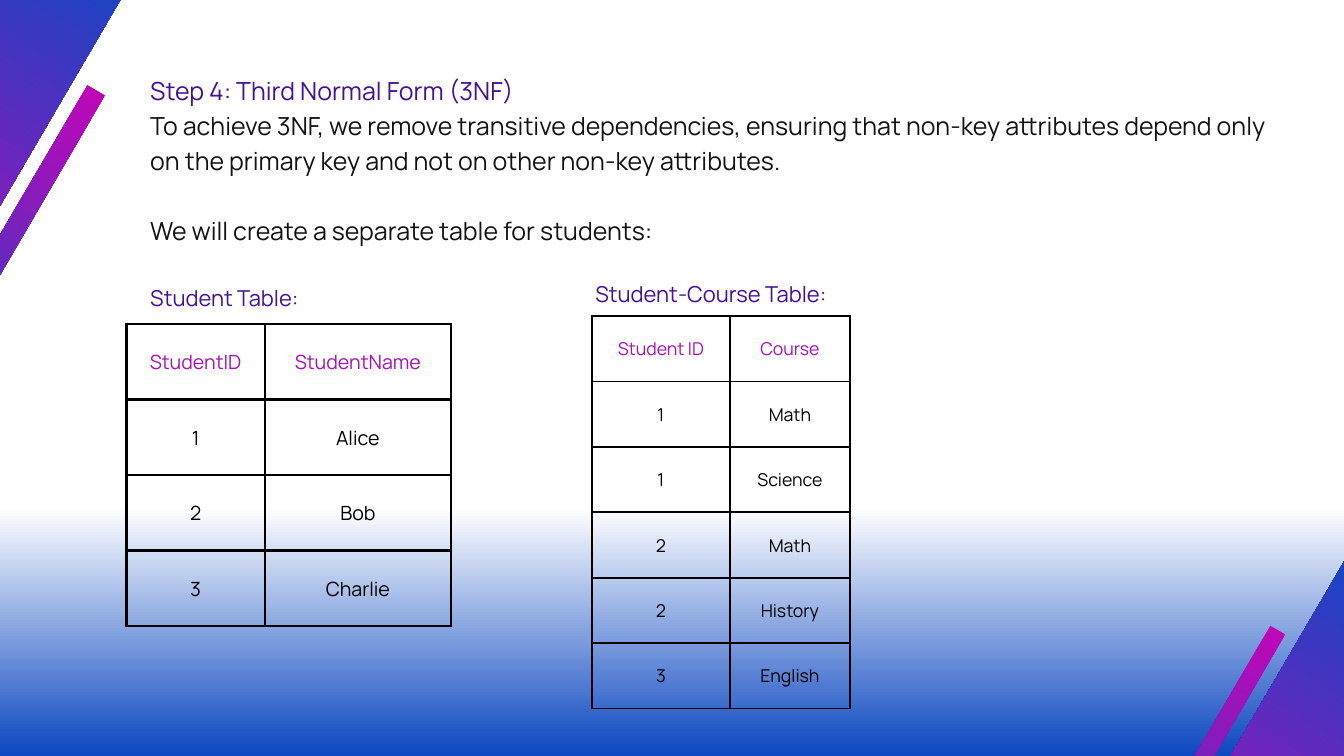
from dataclasses import dataclass

from lxml.etree import SubElement
from pptx import Presentation
from pptx.dml.color import RGBColor
from pptx.enum.shapes import MSO_SHAPE
from pptx.enum.text import MSO_ANCHOR, PP_ALIGN
from pptx.oxml.ns import qn
from pptx.util import Pt

RECTANGLE = MSO_SHAPE.RECTANGLE
MIDDLE = MSO_ANCHOR.MIDDLE
CENTER = PP_ALIGN.CENTER

FONT = "Manrope"
WHITE = RGBColor(0xFF, 0xFF, 0xFF)
BLACK = RGBColor(0x00, 0x00, 0x00)
INK = RGBColor(0x12, 0x12, 0x12)
HEADING = RGBColor(0x43, 0x10, 0x96)
COLUMN_HEADING = RGBColor(0xA8, 0x0F, 0xB9)
SKY = RGBColor(0x0B, 0x47, 0xC0)
VIOLET = RGBColor(0x51, 0x04, 0x8D)
BLUE = RGBColor(0x05, 0x4C, 0xC4)
MAGENTA = RGBColor(0xC4, 0x05, 0xB7)

BACKGROUND_STOPS = [(0, WHITE), (67, WHITE), (100, SKY)]
WIDE_STOPS = [(0, VIOLET), (50, BLUE), (100, MAGENTA)]
NARROW_STOPS = [(0, MAGENTA), (50, BLUE), (100, VIOLET)]
BAND_ROTATION = 30.3
CELL_MARGIN = 15
LINE_FACTOR = 1.4


@dataclass
class Band:
    left: float
    top: float
    width: float
    height: float
    stops: list


@dataclass
class Grid:
    left: float
    top: float
    column_widths: list
    row_height: float
    font_size: float
    border: float
    rows: list


@dataclass
class Line:
    text: str
    size: float
    color: RGBColor
    space_before: float = 0


BANDS = [
    Band(-70.6, -533.5, 251.3, 821.5, WIDE_STOPS),
    Band(-127.4, 37.4, 21.6, 870.5, NARROW_STOPS),
    Band(1448.6, 229, 251.3, 784.1, WIDE_STOPS),
    Band(1144.8, 617, 18, 853.2, NARROW_STOPS),
]

STUDENTS = Grid(135.4, 347, [148.3, 199.5], 81, 21, 3, [
    ("StudentID", "StudentName"),
    ("1", "Alice"),
    ("2", "Bob"),
    ("3", "Charlie"),
])
STUDENT_COURSES = Grid(634.3, 338.6, [147.6, 128.9], 70.1, 19, 2.25, [
    ("Student ID", "Course"),
    ("1", "Math"),
    ("1", "Science"),
    ("2", "Math"),
    ("2", "History"),
    ("3", "English"),
])

EXPLANATION = [
    Line("Step 4: Third Normal Form (3NF)", 26.7, HEADING),
    Line("To achieve 3NF, we remove transitive dependencies, ensuring that "
         "non-key attributes depend only on the primary key and not on other "
         "non-key attributes.", 26.7, INK),
    Line("We will create a separate table for students:", 26.7, INK, 37.4),
    Line("Student Table:", 23.5, HEADING, 37.4),
]
COURSE_CAPTION = [Line("Student-Course Table:", 23.5, HEADING)]


def apply_gradient(fill, element, stops: list) -> None:
    fill.gradient()
    fill.gradient_angle = 270
    stop_list = element.find(".//" + qn("a:gsLst"))
    for old_stop in list(stop_list):
        stop_list.remove(old_stop)
    for percent, color in stops:
        stop = SubElement(stop_list, qn("a:gs"), pos=str(percent * 1000))
        SubElement(stop, qn("a:srgbClr"), val=str(color))


def add_band(slide, band: Band) -> None:
    shape = slide.shapes.add_shape(
        RECTANGLE, Pt(band.left), Pt(band.top), Pt(band.width), Pt(band.height))
    shape.rotation = BAND_ROTATION
    shape.shadow.inherit = False
    shape.line.fill.background()
    apply_gradient(shape.fill, shape.element, band.stops)


def format_paragraph(paragraph, line: Line) -> None:
    paragraph.text = line.text
    paragraph.line_spacing = Pt(round(line.size * LINE_FACTOR, 1))
    paragraph.space_before = Pt(line.space_before)
    paragraph.font.name = FONT
    paragraph.font.size = Pt(line.size)
    paragraph.font.color.rgb = line.color


def add_borders(cell, width: float) -> None:
    properties = cell._tc.get_or_add_tcPr()
    for side in ("a:lnL", "a:lnR", "a:lnT", "a:lnB"):
        border = SubElement(properties, qn(side), w=str(Pt(width)))
        fill = SubElement(border, qn("a:solidFill"))
        SubElement(fill, qn("a:srgbClr"), val=str(BLACK))


def add_grid(slide, grid: Grid) -> None:
    row_count = len(grid.rows)
    table = slide.shapes.add_table(
        row_count, len(grid.column_widths), Pt(grid.left), Pt(grid.top),
        Pt(sum(grid.column_widths)), Pt(grid.row_height * row_count)).table
    table.first_row = False
    table.horz_banding = False
    for column, width in zip(table.columns, grid.column_widths):
        column.width = Pt(width)
    for row_index, values in enumerate(grid.rows):
        table.rows[row_index].height = Pt(grid.row_height)
        color = BLACK if row_index else COLUMN_HEADING
        for column_index, value in enumerate(values):
            cell = table.cell(row_index, column_index)
            add_borders(cell, grid.border)
            cell.fill.background()
            cell.vertical_anchor = MIDDLE
            cell.margin_left = cell.margin_right = Pt(CELL_MARGIN)
            cell.margin_top = cell.margin_bottom = Pt(CELL_MARGIN)
            paragraph = cell.text_frame.paragraphs[0]
            format_paragraph(paragraph, Line(value, grid.font_size, color))
            paragraph.alignment = CENTER


def add_text(slide, left: float, top: float, width: float, height: float,
             lines: list) -> None:
    frame = slide.shapes.add_textbox(
        Pt(left), Pt(top), Pt(width), Pt(height)).text_frame
    frame.word_wrap = True
    frame.margin_left = frame.margin_right = 0
    frame.margin_top = frame.margin_bottom = 0
    for index, line in enumerate(lines):
        paragraph = frame.add_paragraph() if index else frame.paragraphs[0]
        format_paragraph(paragraph, line)


def main() -> None:
    presentation = Presentation()
    presentation.slide_width = Pt(1440)
    presentation.slide_height = Pt(810)
    slide = presentation.slides.add_slide(presentation.slide_layouts[6])
    apply_gradient(slide.background.fill, slide.element, BACKGROUND_STOPS)
    for band in BANDS:
        add_band(slide, band)
    for grid in (STUDENTS, STUDENT_COURSES):
        add_grid(slide, grid)
    add_text(slide, 161, 75.6, 1216, 252.7, EXPLANATION)
    add_text(slide, 638, 296, 1216, 33, COURSE_CAPTION)
    presentation.save("out.pptx")


if __name__ == "__main__":
    main()
